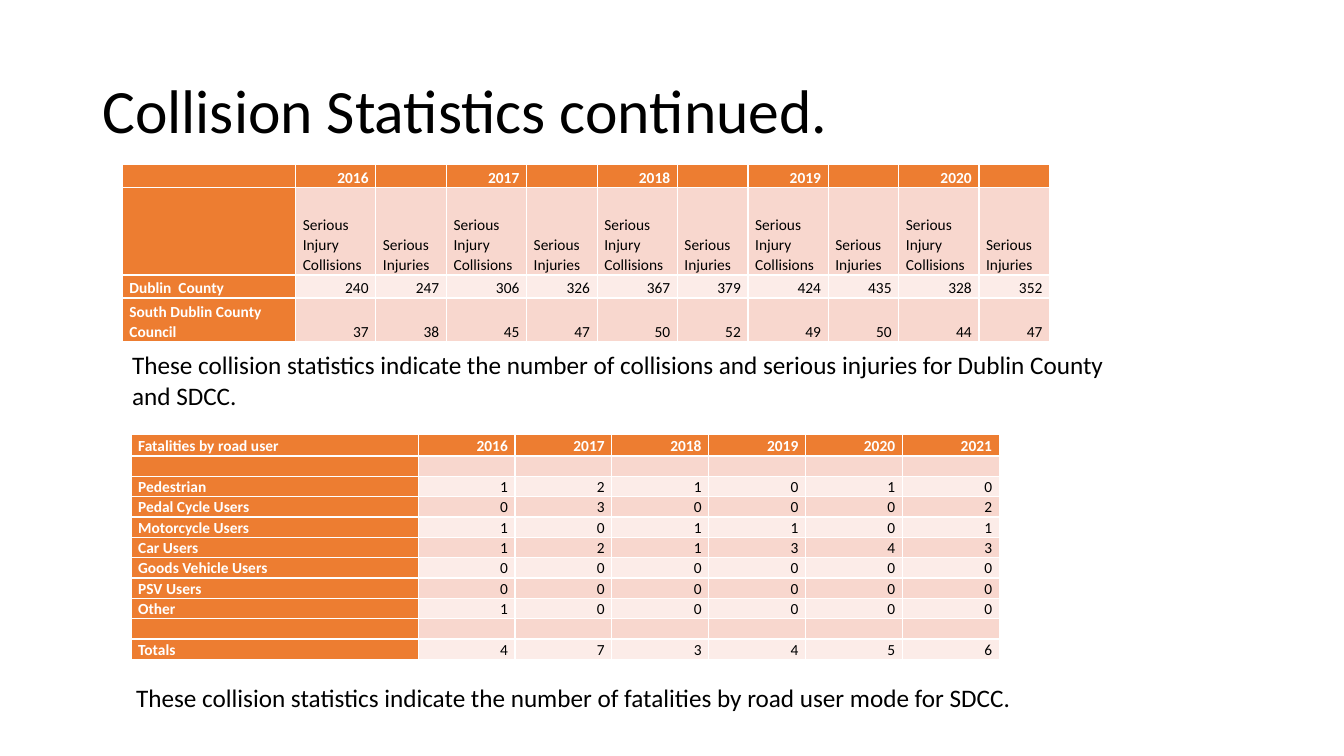
from pptx import Presentation
from pptx.dml.color import RGBColor
from pptx.enum.text import MSO_ANCHOR as Anchor, MSO_AUTO_SIZE as AutoSize, PP_ALIGN as Align
from pptx.util import Cm, Pt

FONT = "Calibri"
COLORS = {
    "header": "ED7D31",
    "band_dark": "F8D7CE",
    "band_light": "FCECE8",
    "header_text": "FFFFFF",
    "text": "000000",
}
CELL_SIZE = 11
CELL_FORMAT = {
    "margin_left": Cm(0.18),
    "margin_right": Cm(0.18),
    "margin_top": 0,
    "margin_bottom": 0,
    "vertical_anchor": Anchor.BOTTOM,
}

YEARS = ["2016", "2017", "2018", "2019", "2020"]
COLLISIONS = [
    [""] + [label for year in YEARS for label in (year, "")],
    [""] + ["Serious Injury Collisions", "Serious Injuries"] * len(YEARS),
    ["Dublin  County", 240, 247, 306, 326, 367, 379, 424, 435, 328, 352],
    ["South Dublin County Council", 37, 38, 45, 47, 50, 52, 49, 50, 44, 47],
]
FATALITIES = [
    ["Fatalities by road user"] + YEARS + ["2021"],
    [""] * 7,
    ["Pedestrian", 1, 2, 1, 0, 1, 0],
    ["Pedal Cycle Users", 0, 3, 0, 0, 0, 2],
    ["Motorcycle Users", 1, 0, 1, 1, 0, 1],
    ["Car Users", 1, 2, 1, 3, 4, 3],
    ["Goods Vehicle Users", 0, 0, 0, 0, 0, 0],
    ["PSV Users", 0, 0, 0, 0, 0, 0],
    ["Other", 1, 0, 0, 0, 0, 0],
    [""] * 7,
    ["Totals", 4, 7, 3, 4, 5, 6],
]


def set_format(target, values):
    for name, value in values.items():
        setattr(target, name, value)


def write(paragraph, text, size, color, bold=False):
    run = paragraph.add_run()
    run.text = text
    set_format(run.font, {"name": FONT, "size": Pt(size), "bold": bold})
    run.font.color.rgb = RGBColor.from_string(COLORS[color])


def add_text(slide, box, text, size, frame_format, line_spacing=1.0):
    frame = slide.shapes.add_textbox(*map(Cm, box)).text_frame
    set_format(frame, {"word_wrap": True, **frame_format})
    paragraph = frame.paragraphs[0]
    paragraph.line_spacing = line_spacing
    write(paragraph, text, size, "text")


def fill_cell(cell, value, row, column):
    is_header = row == 0 or column == 0
    band = "band_dark" if row % 2 else "band_light"
    cell.fill.solid()
    cell.fill.fore_color.rgb = RGBColor.from_string(COLORS["header" if is_header else band])
    set_format(cell, CELL_FORMAT)

    text = str(value)
    paragraph = cell.text_frame.paragraphs[0]
    set_format(paragraph, {
        "alignment": Align.RIGHT if column and text.isdigit() else Align.LEFT,
        "line_spacing": 1.07,
        "space_after": Pt(8),
    })
    if text:
        write(paragraph, text, CELL_SIZE, "header_text" if is_header else "text", is_header)
    else:
        # An empty cell takes its line height from the end-of-paragraph size.
        paragraph._p.get_or_add_endParaRPr().set("sz", str(CELL_SIZE * 100))


def add_statistics_table(slide, left, top, rows, widths, heights):
    """Place a banded table; its white rules come from the default table style."""
    size = (left, top, sum(widths), sum(heights))
    table = slide.shapes.add_table(len(rows), len(widths), *map(Cm, size)).table
    table.first_col = True
    for column, width in zip(table.columns, widths):
        column.width = Cm(width)
    for table_row, height in zip(table.rows, heights):
        table_row.height = Cm(height)
    for row, values in enumerate(rows):
        for column, value in enumerate(values):
            fill_cell(table.cell(row, column), value, row, column)


def build_slide(presentation):
    slide = presentation.slides.add_slide(presentation.slide_layouts[6])
    add_statistics_table(slide, 3.08, 4.14, COLLISIONS,
                         [4.37] + [2.02, 1.78] * len(YEARS), [0.58, 2.21, 0.58, 1.1])
    add_statistics_table(slide, 3.3, 10.95, FATALITIES,
                         [7.24] + [2.44] * 6, [0.54] + [0.51] * 10)
    add_text(slide, (2.33, 1.01, 29.21, 3.68), "Collision Statistics continued.", 44,
             {"vertical_anchor": Anchor.MIDDLE}, 0.9)
    note_format = {"auto_size": AutoSize.SHAPE_TO_FIT_TEXT}
    add_text(slide, (3.08, 8.69, 25.68, 1.8),
             "These collision statistics indicate the number of collisions and serious injuries "
             "for Dublin County and SDCC.", 18, note_format)
    add_text(slide, (3.18, 17.07, 25.68, 1.02),
             "These collision statistics indicate the number of fatalities by road user mode "
             "for SDCC.", 18, note_format)


def main():
    presentation = Presentation()
    set_format(presentation, {"slide_width": Cm(33.87), "slide_height": Cm(19.05)})
    build_slide(presentation)
    presentation.save("out.pptx")


if __name__ == "__main__":
    main()
